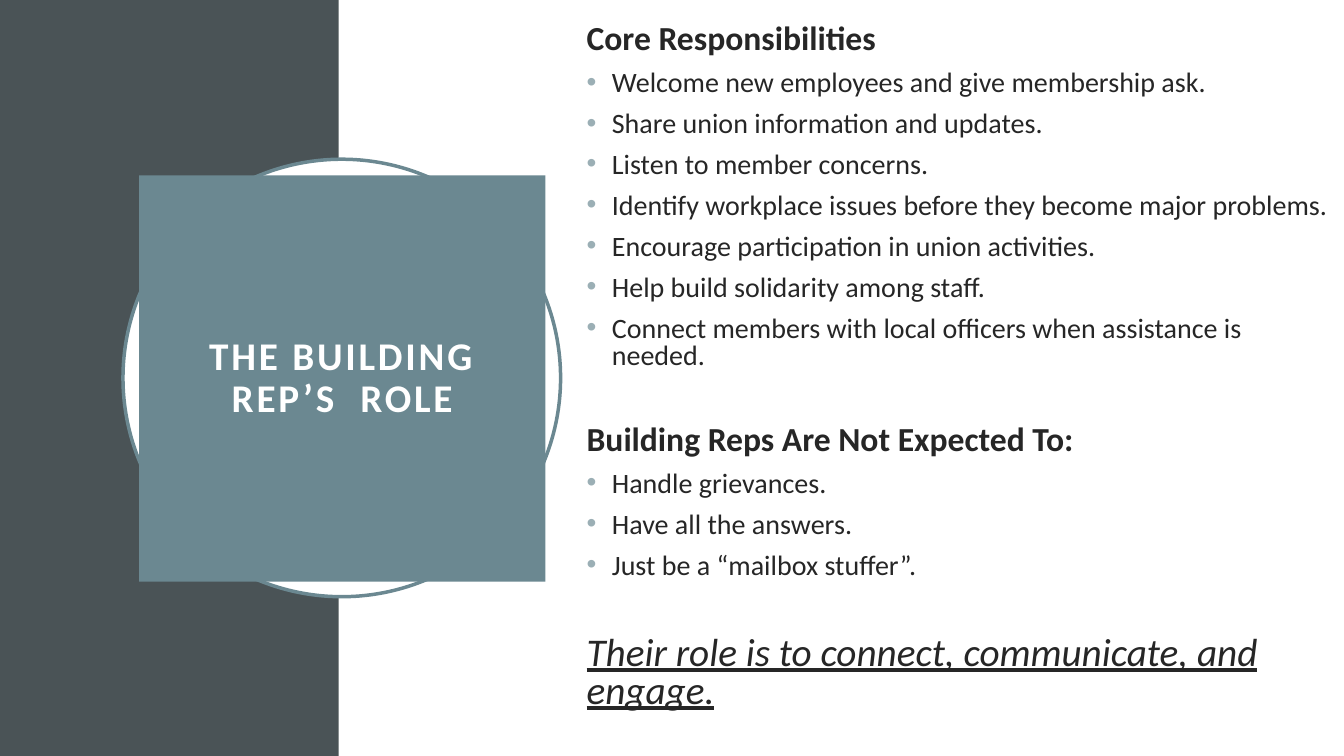
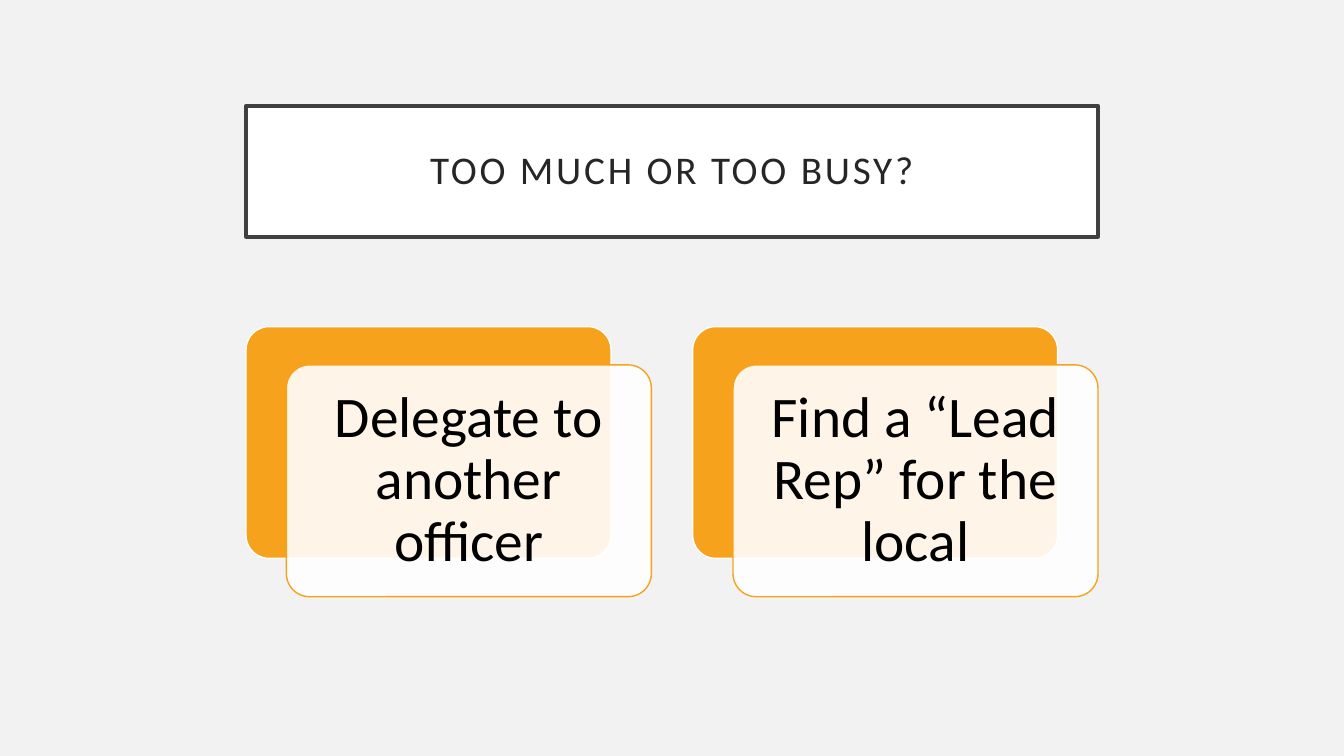
from dataclasses import dataclass

from lxml import etree
from pptx import Presentation
from pptx.dml.color import RGBColor as RGB
from pptx.enum.shapes import MSO_SHAPE as SHAPE
from pptx.enum.text import MSO_ANCHOR as ANCHOR, PP_ALIGN as ALIGN
from pptx.oxml.ns import qn
from pptx.util import Inches, Pt


@dataclass(frozen=True)
class Theme:
    font: str = "Calibri"
    white: str = "FFFFFF"
    black: str = "000000"
    page: str = "F2F2F2"
    ink: str = "262626"
    frame: str = "404040"
    slate: str = "4A5356"
    teal: str = "6B8891"
    bullet: str = "9BAFB5"
    amber: str = "F6A21D"
    title_size: int = 28
    heading_size: int = 24
    item_size: int = 20
    closing_size: int = 28
    card_size: int = 41
    rule: float = 2.5
    hairline: float = 1


THEME = Theme()

ROLE_SECTIONS = [
    ("Core Responsibilities", [
        "Welcome new employees and give membership ask.",
        "Share union information and updates.",
        "Listen to member concerns.",
        "Identify workplace issues before they become major problems.",
        "Encourage participation in union activities.",
        "Help build solidarity among staff.",
        "Connect members with local officers when assistance is needed.",
    ]),
    ("Building Reps Are Not Expected To:", [
        "Handle grievances.",
        "Have all the answers.",
        "Just be a “mailbox stuffer”.",
    ]),
]
ROLE_CLOSING = "Their role is to connect, communicate, and engage."
OPTIONS = ["Delegate to another officer", "Find a “Lead Rep” for the local"]


def add_slide(prs, color):
    slide = prs.slides.add_slide(prs.slide_layouts[6])
    slide.background.fill.solid()
    slide.background.fill.fore_color.rgb = RGB.from_string(color)
    return slide


def add_panel(slide, box, fill, line=None, width=THEME.hairline, kind=SHAPE.RECTANGLE):
    panel = slide.shapes.add_shape(kind, *map(Inches, box))
    panel.shadow.inherit = False
    panel.fill.solid()
    panel.fill.fore_color.rgb = RGB.from_string(fill)
    if line:
        panel.line.color.rgb = RGB.from_string(line)
        panel.line.width = Pt(width)
    else:
        panel.line.fill.background()
    return panel


def set_opacity(panel, percent):
    color = panel.fill._xPr.find(qn("a:solidFill"))[0]
    etree.SubElement(color, qn("a:alpha"), val=str(percent * 1000))


def set_frame(frame, inset, anchor):
    frame.word_wrap = True
    frame.vertical_anchor = anchor
    frame.margin_left = frame.margin_right = Inches(inset)
    frame.margin_top = frame.margin_bottom = Inches(inset)


def style_runs(paragraph, size, color, bold=False, italic=False, underline=False):
    for run in paragraph.runs:
        font = run.font
        font.name, font.size = THEME.font, Pt(size)
        font.color.rgb = RGB.from_string(color)
        font.bold, font.italic, font.underline = bold, italic, underline


def add_centered_text(panel, text, inset, size, color, bold=False):
    frame = panel.text_frame
    frame.text = text
    set_frame(frame, inset, ANCHOR.MIDDLE)
    paragraph = frame.paragraphs[0]
    paragraph.alignment = ALIGN.CENTER
    paragraph.line_spacing = 0.9
    style_runs(paragraph, size, color, bold)
    return paragraph


def add_title(slide, text, box, fill, color, line=None, bold=False):
    title = add_panel(slide, box, fill, line, THEME.rule)
    paragraph = add_centered_text(title, text, 0.2, THEME.title_size, color, bold)
    for run in paragraph.runs:
        run.font._element.set("spc", "200")


def add_bullet(paragraph):
    properties = paragraph._p.get_or_add_pPr()
    properties.set("marL", str(Inches(0.25)))
    properties.set("indent", str(-Inches(0.25)))
    color = etree.SubElement(properties, qn("a:buClr"))
    etree.SubElement(color, qn("a:srgbClr"), val=THEME.bullet)
    etree.SubElement(properties, qn("a:buFont"), typeface="Arial")
    etree.SubElement(properties, qn("a:buChar"), char="•")


def add_line(frame, text, size, before, bulleted=False, **style):
    first = not frame.text
    paragraph = frame.paragraphs[0] if first else frame.add_paragraph()
    paragraph.text = text
    if bulleted:
        add_bullet(paragraph)
    paragraph.line_spacing = 0.8
    paragraph.space_before = Pt(0 if first else before)
    style_runs(paragraph, size, THEME.ink, **style)


def add_role_text(slide, box):
    frame = slide.shapes.add_textbox(*map(Inches, box)).text_frame
    set_frame(frame, 0.05, ANCHOR.TOP)
    frame.margin_left = frame.margin_right = Inches(0.1)
    item_gap, section_gap = 10, 39.5
    for heading, items in ROLE_SECTIONS:
        add_line(frame, heading, THEME.heading_size, section_gap, bold=True)
        for item in items:
            add_line(frame, item, THEME.item_size, item_gap, bulleted=True)
    add_line(frame, ROLE_CLOSING, THEME.closing_size, section_gap,
             italic=True, underline=True)


def add_card(slide, text, left, top):
    width, height = 3.62, 2.3
    back = add_panel(slide, (left, top, width, height), THEME.amber,
                     THEME.white, kind=SHAPE.ROUNDED_RECTANGLE)
    front = add_panel(slide, (left + 0.4, top + 0.38, width, height), THEME.white,
                      THEME.amber, kind=SHAPE.ROUNDED_RECTANGLE)
    for layer in (back, front):
        layer.adjustments[0] = 0.1
    set_opacity(front, 90)
    add_centered_text(front, text, 0.24, THEME.card_size, THEME.black)


def build_role_slide(prs):
    slide = add_slide(prs, THEME.white)
    add_panel(slide, (0, 0, 3.36, 7.5), THEME.slate)
    add_panel(slide, (1.22, 1.58, 4.34, 4.34), THEME.white, THEME.teal,
              THEME.rule, SHAPE.OVAL)
    add_title(slide, "THE BUILDING REP’S  ROLE", (1.38, 1.74, 4.03, 4.03),
              THEME.teal, THEME.white, bold=True)
    add_role_text(slide, (5.72, 0.2, 7.61, 7.05))


def build_options_slide(prs):
    slide = add_slide(prs, THEME.page)
    add_title(slide, "TOO MUCH OR TOO BUSY?", (2.44, 1.05, 8.45, 1.3),
              THEME.white, THEME.ink, line=THEME.frame)
    for index, option in enumerate(OPTIONS):
        add_card(slide, option, 2.44 + index * 4.43, 3.24)


def main():
    prs = Presentation()
    prs.slide_width, prs.slide_height = Inches(13.33), Inches(7.5)
    build_role_slide(prs)
    build_options_slide(prs)
    prs.save("out.pptx")


if __name__ == "__main__":
    main()
